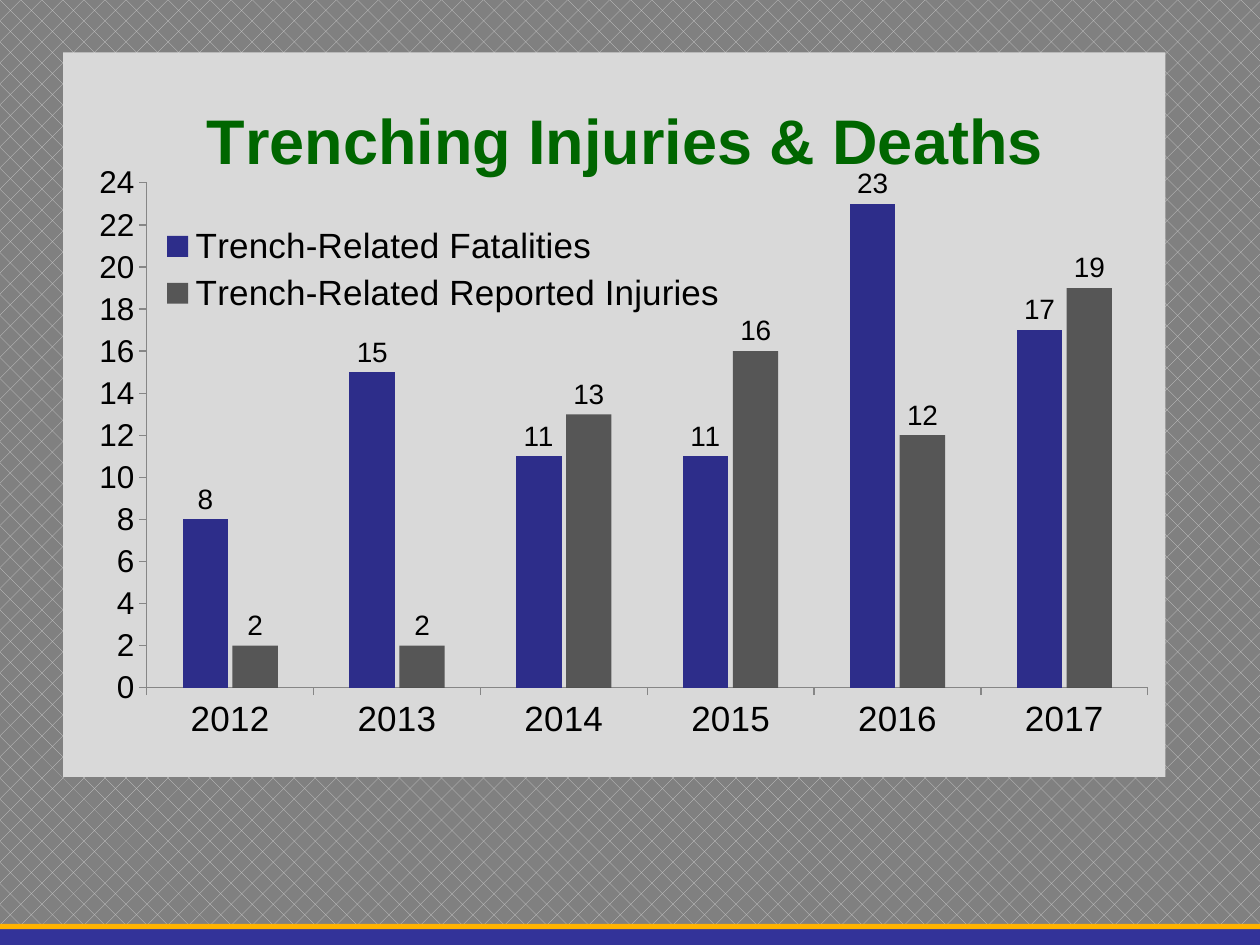
from typing import NamedTuple

import pptx
import pptx.chart.data
import pptx.dml.color
import pptx.dml.fill
import pptx.enum.chart
import pptx.enum.dml
import pptx.enum.shapes
import pptx.oxml
import pptx.oxml.ns
import pptx.util
from pptx.util import Pt

qn = pptx.oxml.ns.qn
NS = ('xmlns:c="http://schemas.openxmlformats.org/drawingml/2006/chart" '
      'xmlns:a="http://schemas.openxmlformats.org/drawingml/2006/main"')


class Band(NamedTuple):
    top: float
    height: float
    color: str


class Series(NamedTuple):
    name: str
    values: tuple
    color: str
    alpha: int


class Frame(NamedTuple):
    """Position as fractions of the chart; no size means automatic size."""
    x: float
    y: float
    w: float = 0
    h: float = 0


YEARS = ("2012", "2013", "2014", "2015", "2016", "2017")
SERIES = (
    Series("Trench-Related Fatalities", (8, 15, 11, 11, 23, 17), "2D2D8A", 100),
    Series("Trench-Related Reported Injuries", (2, 2, 13, 16, 12, 19), "000000", 60),
)
BANDS = (Band(528, 12, "333399"), Band(528, 3, "FFB300"))
PANEL = "D9D9D9"


def rgb(code: str) -> pptx.dml.color.RGBColor:
    return pptx.dml.color.RGBColor.from_string(code)


def style(font, size: float, color: str = "000000", bold: bool = False) -> None:
    font.name, font.size, font.bold = "Arial", Pt(size), bold
    font.color.rgb = rgb(color)


def draw_band(slide, band: Band) -> None:
    shape = slide.shapes.add_shape(
        pptx.enum.shapes.MSO_SHAPE.RECTANGLE,
        Pt(0), Pt(band.top), Pt(720), Pt(band.height))
    shape.shadow.inherit = False
    shape.fill.solid()
    shape.fill.fore_color.rgb = rgb(band.color)
    shape.line.fill.background()


def place(part, frame: Frame, inner: bool = False) -> None:
    """Give a chart part a manual layout."""
    for old in part.findall(qn("c:layout")):
        part.remove(old)
    target = '<c:layoutTarget val="inner"/>' if inner else ""
    modes = '<c:xMode val="edge"/><c:yMode val="edge"/>'
    spots = "".join(f'<c:{key} val="{val}"/>'
                    for key, val in frame._asdict().items() if val)
    layout = pptx.oxml.parse_xml(
        f"<c:layout {NS}><c:manualLayout>{target}{modes}{spots}"
        "</c:manualLayout></c:layout>")
    overlay = part.find(qn("c:overlay"))
    if overlay is None:
        part.insert(0, layout)
    else:
        overlay.addprevious(layout)


def panel_fill():
    return pptx.oxml.parse_xml(
        f'<c:spPr {NS}><a:solidFill><a:srgbClr val="{PANEL}"/></a:solidFill>'
        "<a:ln><a:noFill/></a:ln></c:spPr>")


def style_axis(axis, size: float) -> None:
    style(axis.tick_labels.font, size)
    axis.has_major_gridlines = False
    axis.major_tick_mark = pptx.enum.chart.XL_TICK_MARK.OUTSIDE
    axis.minor_tick_mark = pptx.enum.chart.XL_TICK_MARK.NONE
    axis.format.line.color.rgb = rgb("868686")
    axis.format.line.width = Pt(0.75)


def style_bars(bars, spec: Series) -> None:
    bars.invert_if_negative = False
    fill = bars.format.fill
    fill.solid()
    fill.fore_color.rgb = rgb(spec.color)
    if spec.alpha < 100:
        code = next(bars._element.iter(qn("a:srgbClr")))
        code.append(pptx.oxml.parse_xml(
            f'<a:alpha {NS} val="{spec.alpha * 1000}"/>'))
    labels = bars.data_labels
    labels.show_value = True
    labels.position = pptx.enum.chart.XL_LABEL_POSITION.OUTSIDE_END
    style(labels.font, 16)


def draw_chart(slide) -> None:
    data = pptx.chart.data.CategoryChartData()
    data.categories = YEARS
    for spec in SERIES:
        data.add_series(spec.name, spec.values)
    chart = slide.shapes.add_chart(
        pptx.enum.chart.XL_CHART_TYPE.COLUMN_CLUSTERED,
        Pt(36), Pt(30), Pt(630), Pt(414), data).chart
    style(chart.font, 10)

    chart.has_title = True
    title = chart.chart_title.text_frame.paragraphs[0]
    title.text = "Trenching Injuries & Deaths"
    style(title.font, 36, "006600", True)
    place(chart.chart_title._element, Frame(0.12, 0.05))

    chart.has_legend = True
    legend = chart.legend
    legend.position = pptx.enum.chart.XL_LEGEND_POSITION.TOP
    legend.include_in_layout = False
    style(legend.font, 20)
    place(legend._element, Frame(0.08, 0.23, 0.53, 0.14))

    style_axis(chart.category_axis, 20)
    scale = chart.value_axis
    style_axis(scale, 18)
    scale.minimum_scale, scale.maximum_scale, scale.major_unit = 0, 24, 2

    plot = chart.plots[0]
    plot.gap_width, plot.overlap, plot.vary_by_categories = 158, -10, False
    for bars, spec in zip(plot.series, SERIES):
        style_bars(bars, spec)

    space = chart._chartSpace
    area = space.chart.plotArea
    place(area, Frame(0.076, 0.18, 0.908, 0.697), inner=True)
    area.append(panel_fill())
    space.chart.addnext(panel_fill())


def main() -> None:
    deck = pptx.Presentation()
    deck.slide_width, deck.slide_height = Pt(720), Pt(540)
    slide = deck.slides.add_slide(deck.slide_layouts[6])
    back = slide.background.fill
    back.patterned()
    back.pattern = pptx.enum.dml.MSO_PATTERN.DIAGONAL_BRICK
    back.fore_color.rgb = rgb("CFCFCF")
    back.back_color.rgb = rgb("808080")
    for band in BANDS:
        draw_band(slide, band)
    draw_chart(slide)
    deck.save("out.pptx")


if __name__ == "__main__":
    main()
